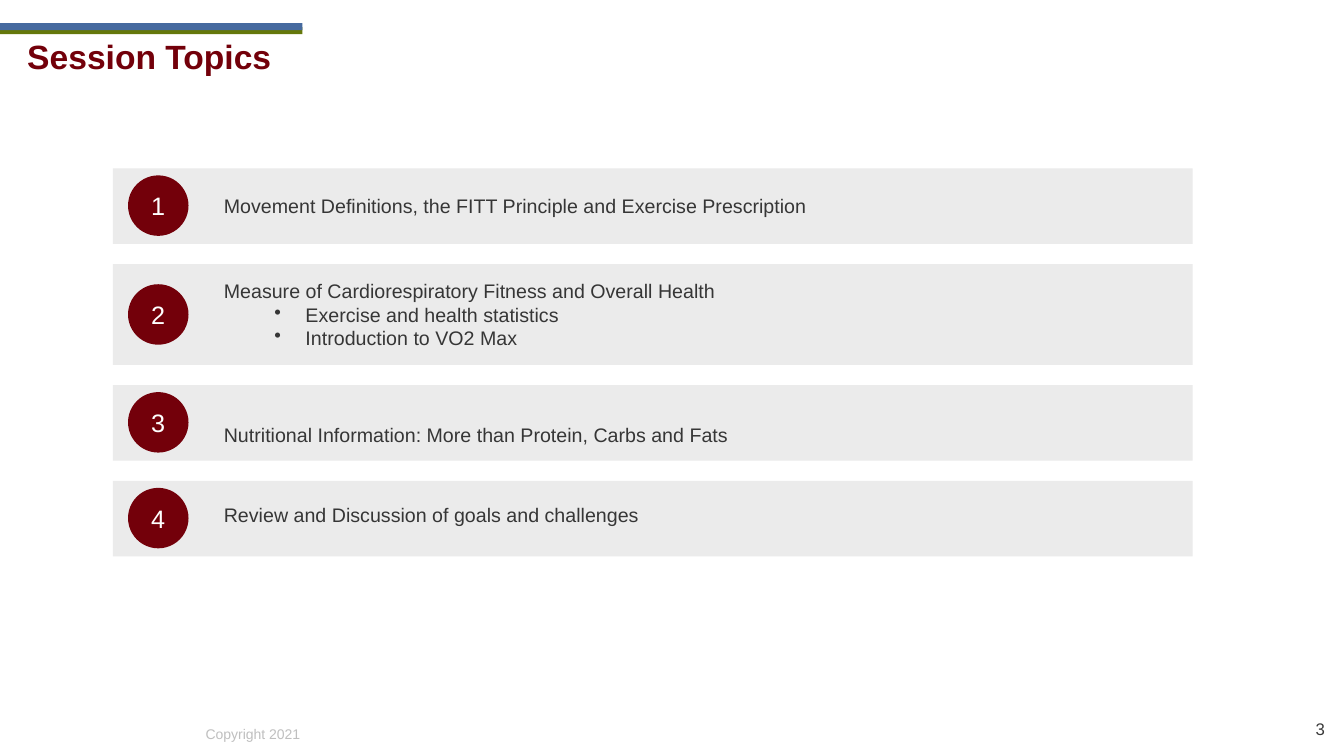
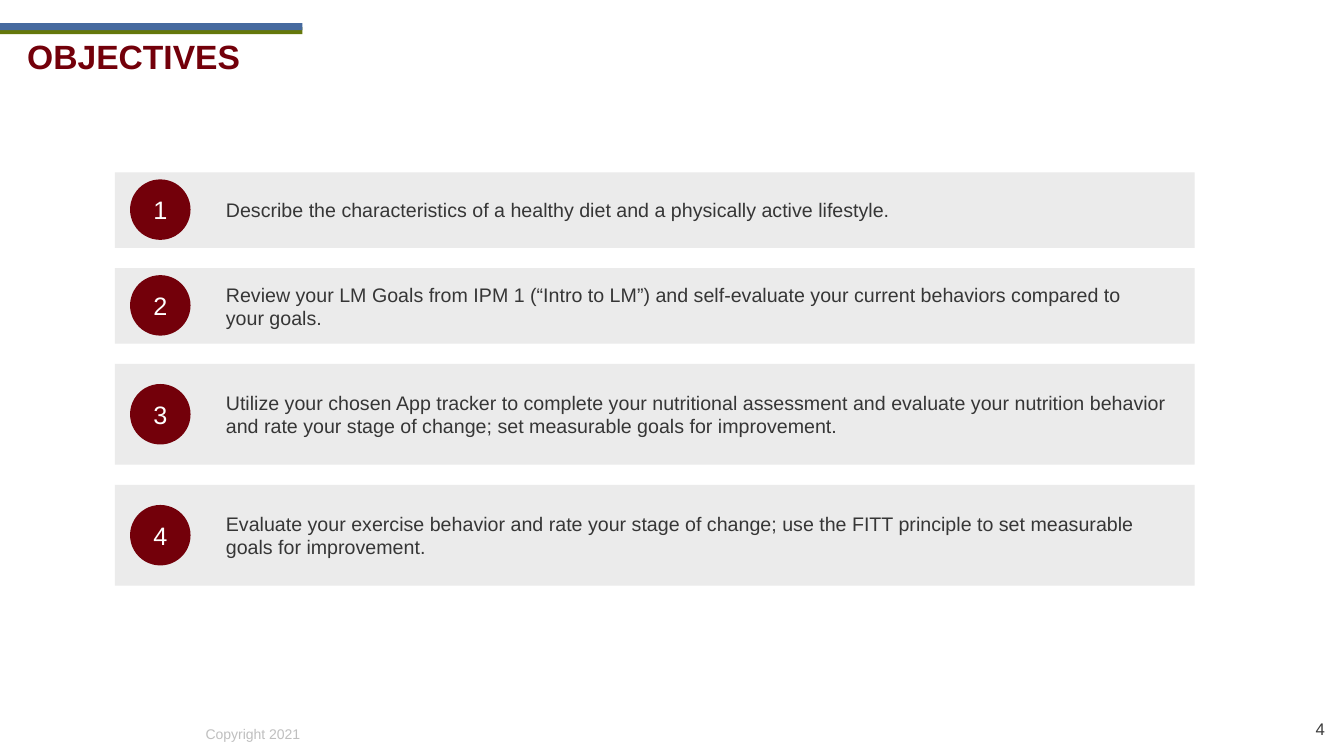
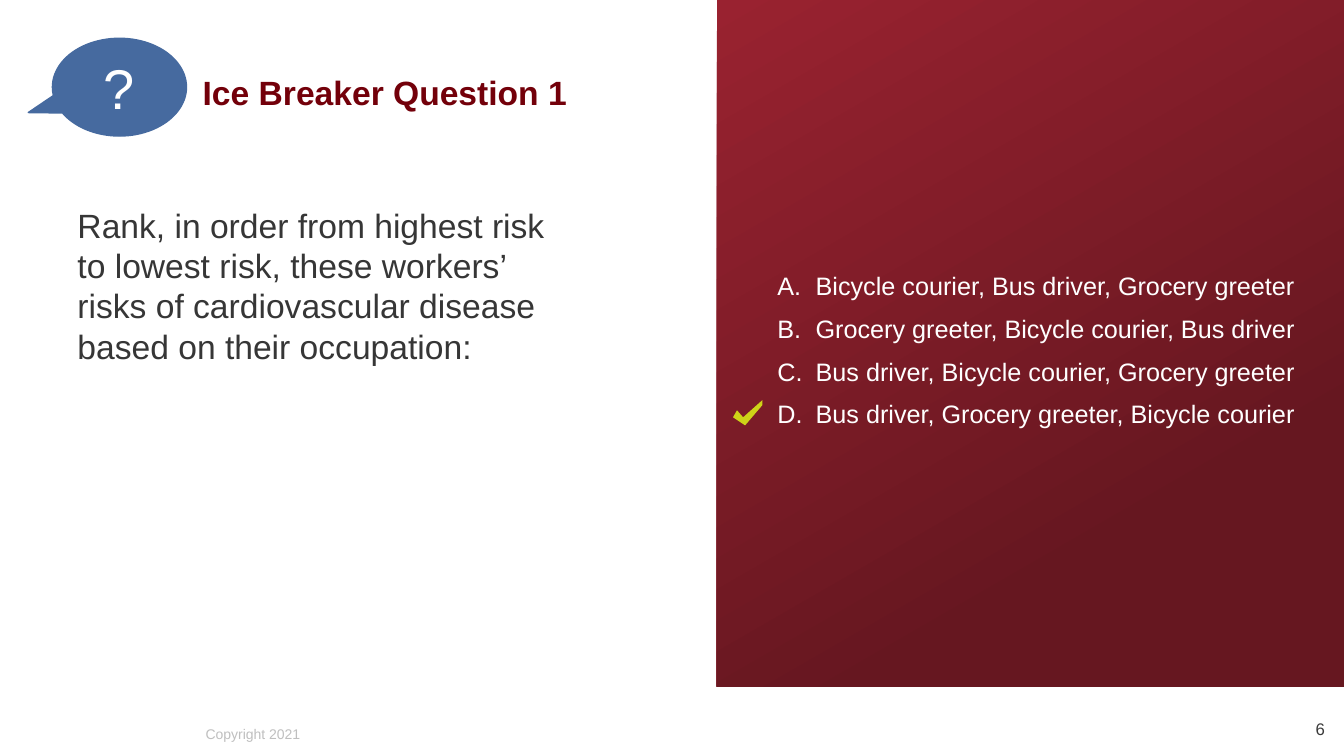
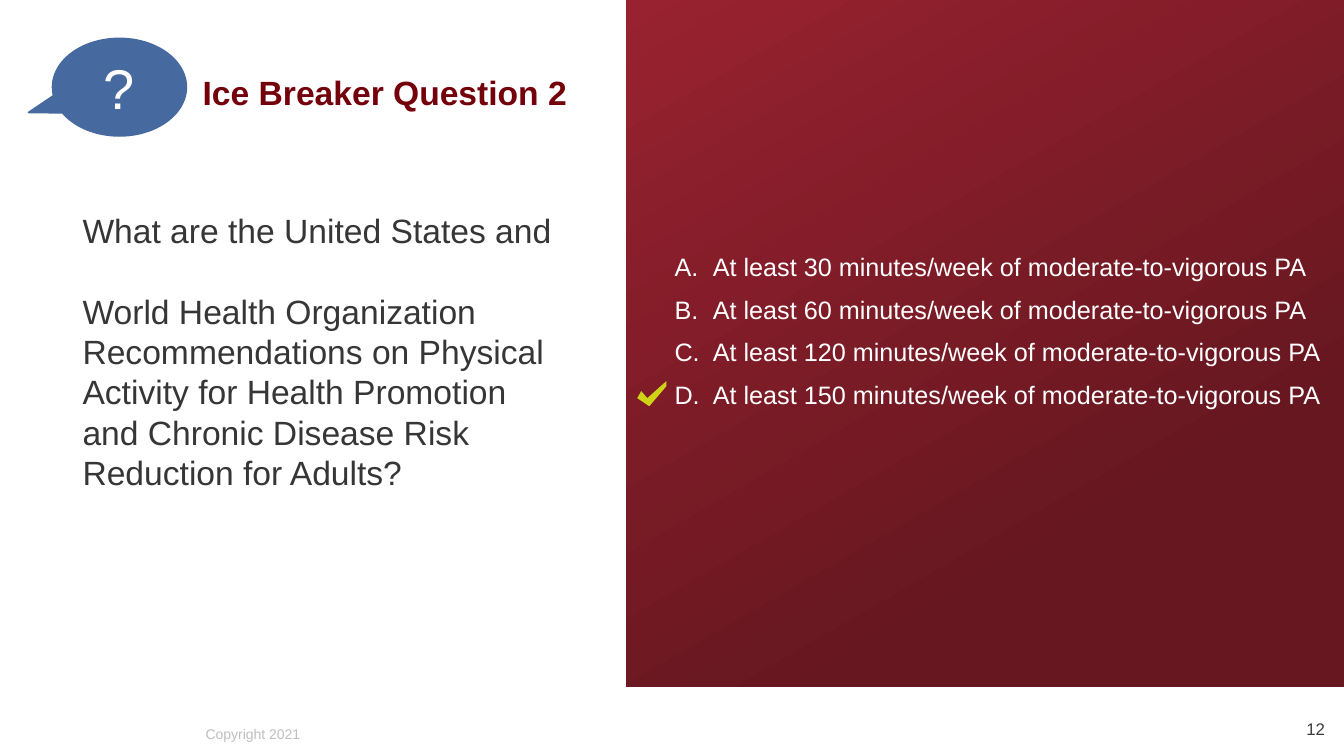
from lxml.etree import SubElement
from pptx import Presentation
from pptx.dml.color import RGBColor
from pptx.enum.shapes import MSO_SHAPE
from pptx.enum.text import MSO_ANCHOR, MSO_AUTO_SIZE, PP_ALIGN
from pptx.oxml.ns import qn
from pptx.util import Pt

PX = 9144  # 100 px to the inch
WIDTH, HEIGHT = 1333, 750
FONT = "Arial"
COLORS = {
    "maroon": "73000A", "blue": "466A9F", "green": "65780B", "bar": "EBEBEB",
    "text": "363636", "number": "3B3B3B", "footer": "BFBFBF", "white": "FFFFFF",
    "panel_light": "992230", "panel_dark": "661720", "check": "CED318",
}

# Content: each row has its height, its lines (all but the first bulleted)
# and the distance its text sits below the middle of the bar
LIST_SLIDES = [
    {"title": "Session Topics", "number": "3", "left": 112, "top": 167, "rows": [
        (75, ["Movement Definitions, the FITT Principle and Exercise Prescription"], 0),
        (100, ["Measure of Cardiorespiratory Fitness and Overall Health",
               "Exercise and health statistics",
               "Introduction to VO2 Max"], 0),
        (75, ["Nutritional Information: More than Protein, Carbs and Fats"], 12),
        (75, ["Review and Discussion of goals and challenges"], -4),
    ]},
    {"title": "OBJECTIVES", "number": "4", "left": 114, "top": 171, "rows": [
        (75, ["Describe the characteristics of a healthy diet and a physically active lifestyle."], 0),
        (75, ["Review your LM Goals from IPM 1 (“Intro to LM”) and self-evaluate your "
              "current behaviors compared to\vyour goals."], 0),
        (100, ["Utilize your chosen App tracker to complete your nutritional assessment and "
               "evaluate your nutrition behavior and rate your stage of change; set "
               "measurable goals for improvement."], 0),
        (100, ["Evaluate your exercise behavior and rate your stage of change; use the FITT "
               "principle to set measurable\vgoals for improvement."], 0),
    ]},
]
QUESTION_SLIDES = [
    {"title": "Ice Breaker Question 1", "number": "6", "panel_left": 711,
     "question_box": (67, 198, 505, 434),
     "question": ["Rank, in order from highest risk to lowest risk, these workers’ risks of "
                  "cardiovascular disease based on their occupation:"],
     "answers_at": (761, 263), "check_left": 727,
     "answers": ["Bicycle courier, Bus driver, Grocery greeter",
                 "Grocery greeter, Bicycle courier, Bus driver",
                 "Bus driver, Bicycle courier, Grocery greeter",
                 "Bus driver, Grocery greeter, Bicycle courier"]},
    {"title": "Ice Breaker Question 2", "number": "12", "panel_left": 621,
     "question_box": (72, 203, 488, 375),
     "question": ["What are the United States and",
                  "World Health Organization Recommendations on Physical Activity for Health "
                  "Promotion and Chronic Disease Risk Reduction for Adults?"],
     "answers_at": (659, 244), "check_left": 632,
     "answers": [f"At least {minutes} minutes/week of moderate-to-vigorous PA"
                 for minutes in (30, 60, 120, 150)]},
]
CHECK_POINTS = [(4, 10), (0, 17), (12, 25), (29, 5), (29, 0), (10, 17)]
CHECK_DROP = 134  # from the top of the answers to the check mark

BAR_WIDTH, BAR_GAP, BADGE, BADGE_INSET = 1071, 20, 60, 15
PANEL_HEIGHT = 681
CHARACTER_BULLET = ("a:buChar", {"char": "•"})
LETTER_BULLET = ("a:buAutoNum", {"type": "alphaUcPeriod"})


def color(name):
    return RGBColor.from_string(COLORS[name])


def write(shape, lines, size, color_name, bold=False, align=PP_ALIGN.LEFT,
          anchor=MSO_ANCHOR.TOP, wrap=True, margins=(10, 5, 10, 5), bullet=None,
          first_bullet=0, indent=0, hanging=0, before=0, after=0):
    """Fill a shape with paragraphs; lines from first_bullet on take the bullet."""
    frame = shape.text_frame
    frame.auto_size = MSO_AUTO_SIZE.NONE
    frame.word_wrap = wrap
    frame.vertical_anchor = anchor
    (frame.margin_left, frame.margin_top,
     frame.margin_right, frame.margin_bottom) = [margin * PX for margin in margins]
    for index, line in enumerate(lines):
        paragraph = frame.add_paragraph() if index else frame.paragraphs[0]
        paragraph.text = line
        if bullet and index >= first_bullet:
            tag, attributes = bullet
            properties = paragraph._p.get_or_add_pPr()
            properties.set("marL", str(indent * PX))
            properties.set("indent", str(-hanging * PX))
            SubElement(properties, qn(tag), attributes)
        paragraph.alignment = align
        paragraph.space_before = Pt(before if index else 0)
        paragraph.space_after = Pt(after)
        for line_break in paragraph._p.findall(qn("a:br")):
            SubElement(line_break, qn("a:rPr"), sz=str(size * 100))
        for run in paragraph.runs:
            run.font.name, run.font.size, run.font.bold = FONT, Pt(size), bold
            run.font.color.rgb = color(color_name)


def place(shape, *box):
    shape.left, shape.top, shape.width, shape.height = [length * PX for length in box]
    return shape


def add_shape(slide, kind, box, fill):
    shape = slide.shapes.add_shape(kind, *[length * PX for length in box])
    return paint(shape, fill)


def paint(shape, fill):
    shape.shadow.inherit = False
    shape.fill.solid()
    shape.fill.fore_color.rgb = color(fill)
    shape.line.fill.background()
    return shape


def add_text(slide, box, lines, size, color_name, **text_format):
    text_box = slide.shapes.add_textbox(*[length * PX for length in box])
    write(text_box, lines, size, color_name, **text_format)


def add_slide(presentation, layout, content, title_box):
    """Start a slide with what all slides share: title, copyright and number."""
    slide = presentation.slides.add_slide(presentation.slide_layouts[layout])
    write(place(slide.shapes.title, *title_box), [content["title"]], 24, "maroon", bold=True)
    add_text(slide, (194, 715, 115, 27), ["Copyright 2021"], 10, "footer", wrap=False)
    add_text(slide, (1235, 703, 89, 40), [content["number"]], 12, "number",
             align=PP_ALIGN.RIGHT, anchor=MSO_ANCHOR.MIDDLE)
    return slide


def add_list_slide(presentation, content):
    slide = add_slide(presentation, 5, content, (17, 31, 318, 50))
    for top, fill in ((27, "green"), (23, "blue")):
        add_shape(slide, MSO_SHAPE.RECTANGLE, (0, top, 300, 7), fill)

    # Numbered bars, stacked with equal gaps
    left, top = content["left"], content["top"]
    for number, (height, lines, drop) in enumerate(content["rows"], start=1):
        bar = add_shape(slide, MSO_SHAPE.RECTANGLE, (left, top, BAR_WIDTH, height), "bar")
        margins = (110, 5 + max(2 * drop, 0), 10, 5 + max(-2 * drop, 0))
        write(bar, lines, 14, "text", anchor=MSO_ANCHOR.MIDDLE, margins=margins,
              bullet=CHARACTER_BULLET, first_bullet=1, indent=81, hanging=31)
        badge_top = top + (height - BADGE) // 2
        badge = add_shape(slide, MSO_SHAPE.OVAL,
                          (left + BADGE_INSET, badge_top, BADGE, BADGE), "maroon")
        write(badge, [str(number)], 18, "white", align=PP_ALIGN.CENTER,
              anchor=MSO_ANCHOR.MIDDLE)
        top += height + BAR_GAP


def add_question_slide(presentation, content):
    slide = add_slide(presentation, 1, content, (191, 66, 420, 50))

    # Gradient panel, sent behind the placeholders
    panel_left = content["panel_left"]
    panel = add_shape(slide, MSO_SHAPE.RECTANGLE,
                      (panel_left, 0, WIDTH - panel_left, PANEL_HEIGHT), "panel_dark")
    panel.fill.gradient()
    panel.fill.gradient_angle = 300
    stops = ((0, "panel_light"), (0.74, "panel_dark"))
    for stop, (position, name) in zip(panel.fill.gradient_stops, stops):
        stop.position = position
        stop.color.rgb = color(name)
    slide.shapes._spTree.insert(2, panel._element)

    # Question
    callout = add_shape(slide, MSO_SHAPE.OVAL_CALLOUT, (52, 38, 133, 97), "blue")
    callout.adjustments[0], callout.adjustments[1] = -0.68, 0.26
    callout.line.color.rgb = color("blue")
    callout.line.width = Pt(1)
    write(callout, ["?"], 40, "white", align=PP_ALIGN.CENTER, anchor=MSO_ANCHOR.MIDDLE)
    add_text(slide, content["question_box"], content["question"], 24, "text", before=29)

    # Answers, with a check mark beside the last one
    left, top = content["answers_at"]
    answers = place(slide.placeholders[1], left, top, WIDTH - left, 180)
    write(answers, content["answers"], 18, "white", bullet=LETTER_BULLET,
          indent=38, hanging=38, after=9)
    points = [(content["check_left"] + x, top + CHECK_DROP + y) for x, y in CHECK_POINTS]
    outline = slide.shapes.build_freeform(*points[0], scale=PX)
    outline.add_line_segments(points[1:], close=True)
    paint(outline.convert_to_shape(), "check")


def main():
    presentation = Presentation()
    presentation.slide_width, presentation.slide_height = WIDTH * PX, HEIGHT * PX
    for content in LIST_SLIDES:
        add_list_slide(presentation, content)
    for content in QUESTION_SLIDES:
        add_question_slide(presentation, content)
    presentation.save("out.pptx")


if __name__ == "__main__":
    main()
